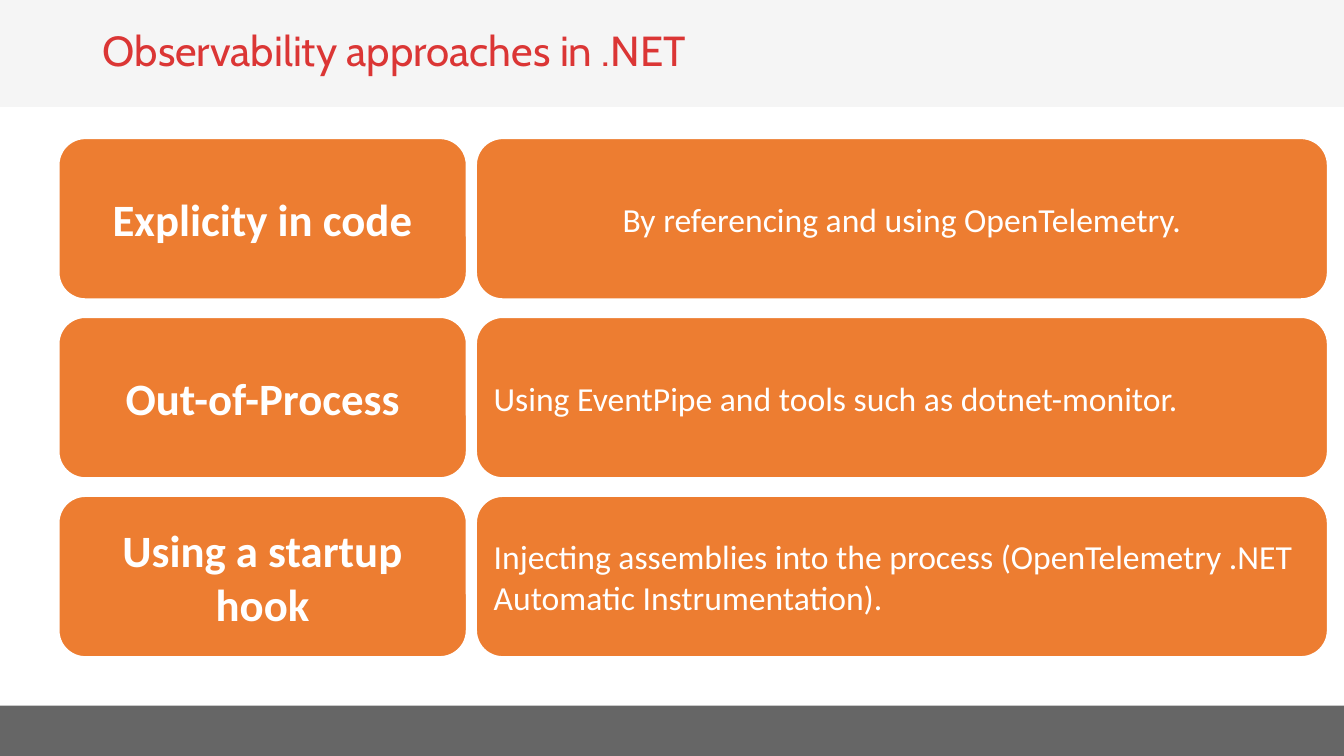
from pptx import Presentation
from pptx.dml.color import RGBColor
from pptx.enum.shapes import MSO_SHAPE as SHAPE
from pptx.enum.text import MSO_ANCHOR as ANCHOR, PP_ALIGN as ALIGN
from pptx.util import Inches, Pt

WHITE = RGBColor(0xFF, 0xFF, 0xFF)
ORANGE = RGBColor(0xED, 0x7D, 0x31)
RED = RGBColor(0xDB, 0x36, 0x35)
LIGHT_GREY = RGBColor(0xF5, 0xF5, 0xF5)
DARK_GREY = RGBColor(0x66, 0x66, 0x66)

SLIDE_WIDTH = 13.33
ROW_TOP, ROW_STEP, ROW_HEIGHT = 1.37, 1.775, 1.6

APPROACHES = [
    ("Explicity in code", "By referencing and using OpenTelemetry.", ALIGN.CENTER),
    ("Out-of-Process", "Using EventPipe and tools such as dotnet-monitor.", ALIGN.LEFT),
    ("Using a startup hook",
     "Injecting assemblies into the process (OpenTelemetry .NET Automatic Instrumentation).",
     ALIGN.LEFT),
]


def add_box(slide, kind, left, top, width, height, fill):
    sp = slide.shapes.add_shape(kind, Inches(left), Inches(top), Inches(width), Inches(height))
    sp.shadow.inherit = False
    sp.fill.solid()
    sp.fill.fore_color.rgb = fill
    sp.line.fill.background()
    return sp


def set_text(sp, text, font, size, color, align=ALIGN.LEFT, bold=False):
    tf = sp.text_frame
    tf.word_wrap = True
    tf.vertical_anchor = ANCHOR.MIDDLE
    tf.text = text
    p = tf.paragraphs[0]
    p.alignment = align
    r = p.runs[0]
    r.font.name = font
    r.font.size = Pt(size)
    r.font.bold = bold
    r.font.color.rgb = color
    return p


def add_title(slide, text):
    sp = slide.shapes.add_textbox(Inches(0.92), Inches(0.04), Inches(10.58), Inches(0.97))
    p = set_text(sp, text, "Cabin", 30, RED)
    p.line_spacing = 0.9


def add_card(slide, left, top, width, text, size, align, bold=False):
    sp = add_box(slide, SHAPE.ROUNDED_RECTANGLE, left, top, width, ROW_HEIGHT, ORANGE)
    sp.line.color.rgb = WHITE
    sp.line.width = Pt(1.5)
    set_text(sp, text, "Calibri", size, WHITE, align, bold)


def main():
    prs = Presentation()
    prs.slide_width = Inches(SLIDE_WIDTH)
    prs.slide_height = Inches(7.5)
    slide = prs.slides.add_slide(prs.slide_layouts[6])

    add_box(slide, SHAPE.RECTANGLE, 0, 7, SLIDE_WIDTH, 0.5, DARK_GREY)
    add_box(slide, SHAPE.RECTANGLE, 0, 0, SLIDE_WIDTH, 1.06, LIGHT_GREY)
    add_title(slide, "Observability approaches in .NET")

    for row, (name, description, align) in enumerate(APPROACHES):
        top = ROW_TOP + row * ROW_STEP
        add_card(slide, 0.58, top, 4.05, name, 32, ALIGN.CENTER, bold=True)
        add_card(slide, 4.72, top, 8.45, description, 24, align)

    prs.save("out.pptx")


if __name__ == "__main__":
    main()
